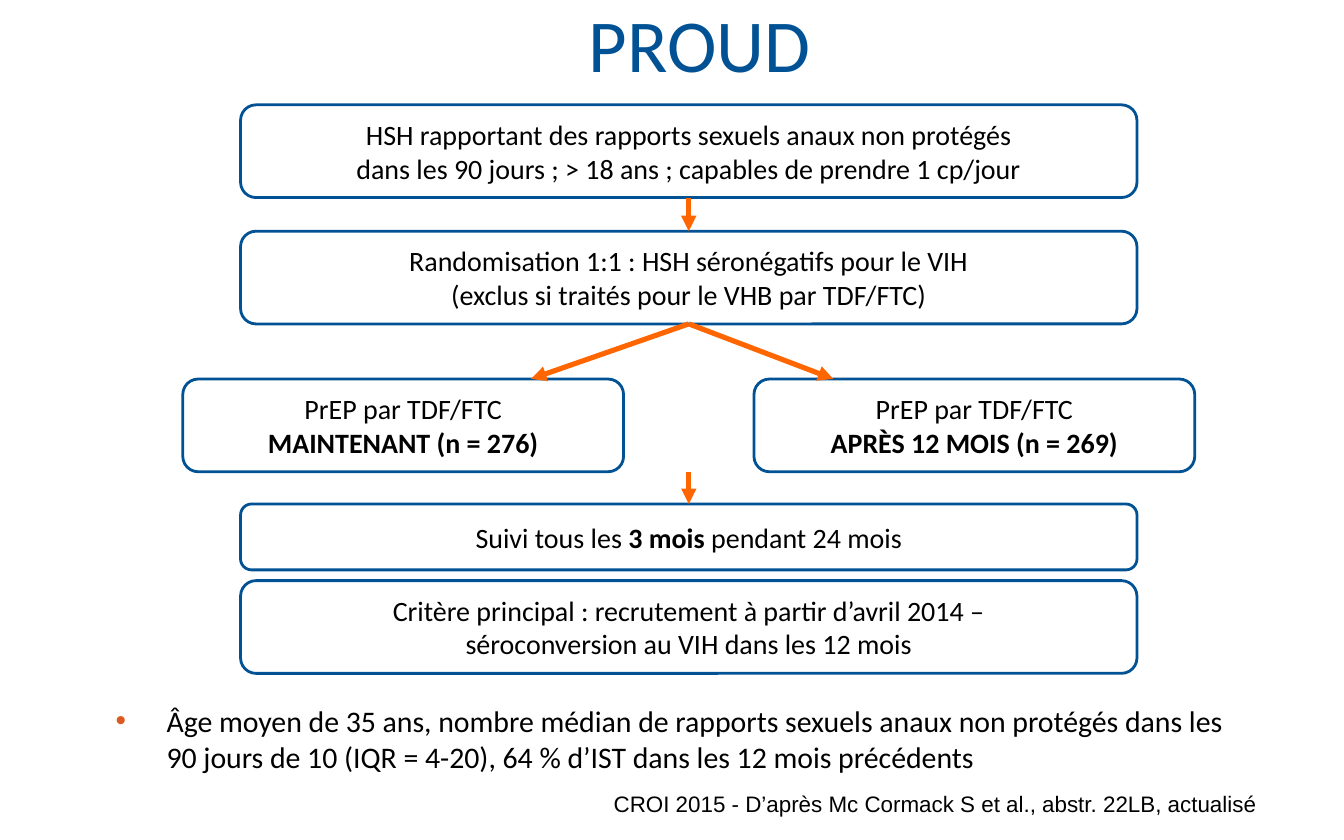
from dataclasses import dataclass

from lxml.etree import SubElement
from pptx import Presentation
from pptx.dml.color import RGBColor
from pptx.enum.shapes import MSO_CONNECTOR, MSO_SHAPE
from pptx.enum.text import MSO_ANCHOR, MSO_AUTO_SIZE, PP_ALIGN
from pptx.oxml.ns import qn
from pptx.util import Inches, Pt

WIDTH, HEIGHT = Inches(10), Inches(6.25)
BLUE, ORANGE, RUST = "005294", "FF6600", "DC5A20"
BLACK, WHITE = "000000", "FFFFFF"
TOP, BOTTOM = 0, 2


@dataclass
class Box:
    """A rectangle on a grid of 100 columns by 100 rows."""

    left: float
    top: float
    width: float
    height: float

    def inner(self, left, top, width, height):
        """Return a rectangle placed relative to this one."""
        return Box(self.left + left, self.top + top, width, height)

    def point(self, across, down):
        """Return a position given as shares of this rectangle."""
        return (
            column(self.left + across * self.width),
            row(self.top + down * self.height),
        )

    def frame(self):
        """Return left, top, width and height as lengths."""
        return column(self.left), row(self.top), column(self.width), row(self.height)


def column(count):
    """Return the length of a number of grid columns."""
    return round(WIDTH * count / 100)


def row(count):
    """Return the length of a number of grid rows."""
    return round(HEIGHT * count / 100)


def colour(value):
    """Turn a hex string into a colour."""
    return RGBColor.from_string(value)


def write(text_frame, *texts, size=15, font="Calibri", fill=BLACK,
          align=PP_ALIGN.CENTER, anchor=MSO_ANCHOR.MIDDLE, inset=None):
    """Write one paragraph per text, with ** around bold words."""
    text_frame.word_wrap = True
    text_frame.auto_size = MSO_AUTO_SIZE.NONE
    text_frame.vertical_anchor = anchor
    if inset is not None:
        text_frame.margin_left = text_frame.margin_right = inset
        text_frame.margin_top = text_frame.margin_bottom = inset
    for index, text in enumerate(texts):
        paragraph = text_frame.add_paragraph() if index else text_frame.paragraphs[0]
        paragraph.alignment = align
        for number, line in enumerate(text.split("\n")):
            if number:
                paragraph.add_line_break()
            for position, words in enumerate(line.split("**")):
                if words:
                    run = paragraph.add_run()
                    run.text = words
                    run.font.name = font
                    run.font.size = Pt(size)
                    run.font.bold = position % 2 == 1
                    run.font.color.rgb = colour(fill)
        for line_break in paragraph._p.findall(qn("a:br")):
            SubElement(line_break, qn("a:rPr")).set("sz", str(size * 100))


def add_step(slide, box, *texts):
    """Add one rounded step of the flowchart."""
    shape = slide.shapes.add_shape(MSO_SHAPE.ROUNDED_RECTANGLE, *box.frame())
    shape.shadow.inherit = False
    shape.fill.solid()
    shape.fill.fore_color.rgb = colour(WHITE)
    shape.line.color.rgb = colour(BLUE)
    shape.line.width = Pt(1.5)
    write(shape.text_frame, *texts)
    return shape


def add_arrow(slide, start, end, source=None, target=None):
    """Add an arrow, joined to the bottom of source and the top of target."""
    arrow = slide.shapes.add_connector(MSO_CONNECTOR.STRAIGHT, *start, *end)
    if source is not None:
        arrow.begin_connect(source, BOTTOM)
    if target is not None:
        arrow.end_connect(target, TOP)
    arrow.line.color.rgb = colour(ORANGE)
    arrow.line.width = Pt(2.75)
    properties = arrow._element.spPr
    SubElement(properties.find(qn("a:ln")), qn("a:tailEnd")).set("type", "triangle")
    SubElement(properties, qn("a:effectLst"))


def add_title(slide, box, text):
    """Place and format the title."""
    title = slide.shapes.title
    title.left, title.top, title.width, title.height = box.frame()
    write(title.text_frame, text, size=40, fill=BLUE, inset=0)
    title.text_frame.paragraphs[0].line_spacing = Pt(22)


def add_flowchart(slide, box):
    """Draw the trial design from inclusion to main criterion."""
    tall, short, wide, narrow = 11.04, 7.84, 66.7, 32.8
    indent = (box.width - wide) / 2
    inclusion_box = box.inner(indent, 0, wide, tall)
    random_box = box.inner(indent, 15.04, wide, tall)
    now_box = box.inner(0, 32.64, narrow, tall)
    later_box = box.inner(box.width - narrow, 32.64, narrow, tall)
    follow_box = box.inner(indent, 47.52, wide, short)
    criterion_box = box.inner(indent, 56.64, wide, tall)

    inclusion = add_step(
        slide, inclusion_box,
        "HSH rapportant des rapports sexuels anaux non protégés\n"
        "dans les 90 jours ; > 18 ans ; capables de prendre 1 cp/jour")
    randomisation = add_step(
        slide, random_box,
        "Randomisation 1:1 : HSH séronégatifs pour le VIH\n"
        "(exclus si traités pour le VHB par TDF/FTC)")
    add_step(slide, now_box, "PrEP par TDF/FTC", "**MAINTENANT (n = 276)**")
    add_step(slide, later_box, "PrEP par TDF/FTC", "**APRÈS 12 MOIS (n = 269)**")
    follow_up = add_step(slide, follow_box,
                         "Suivi tous les **3 mois **pendant 24 mois")
    add_step(
        slide, criterion_box,
        "Critère principal : recrutement à partir d’avril 2014 –\n"
        "séroconversion au VIH dans les 12 mois")

    add_arrow(slide, inclusion_box.point(0.5, 1), random_box.point(0.5, 0),
              inclusion, randomisation)
    for arm_box, share in ((now_box, 0.79), (later_box, 0.18)):
        add_arrow(slide, random_box.point(0.5, 1), arm_box.point(share, 0),
                  randomisation)
    arms_bottom = random_box.point(0.5, 0)[0], now_box.point(0, 1)[1]
    add_arrow(slide, arms_bottom, follow_box.point(0.5, 0), target=follow_up)


def add_bullet(slide, box, text):
    """Add the bulleted remark."""
    shape = slide.shapes.add_textbox(*box.frame())
    write(shape.text_frame, text, size=16, align=PP_ALIGN.LEFT,
          anchor=MSO_ANCHOR.TOP, inset=0)
    paragraph = shape.text_frame.paragraphs[0]
    paragraph.space_before = Pt(3.2)
    properties = paragraph._p.get_or_add_pPr()
    properties.set("marL", str(Inches(0.38)))
    properties.set("indent", str(-Inches(0.38)))
    bullet_colour = SubElement(properties, qn("a:buClr"))
    SubElement(bullet_colour, qn("a:srgbClr")).set("val", RUST)
    SubElement(properties, qn("a:buFont")).set("typeface", "Arial")
    SubElement(properties, qn("a:buChar")).set("char", "•")


def add_credit(slide, box, text):
    """Add the reference at the bottom right."""
    shape = slide.shapes.add_textbox(*box.frame())
    write(shape.text_frame, text, size=12, font="Arial",
          align=PP_ALIGN.RIGHT, anchor=MSO_ANCHOR.TOP)


def main():
    """Build and save the slide."""
    presentation = Presentation()
    presentation.slide_width, presentation.slide_height = WIDTH, HEIGHT
    slide = presentation.slides.add_slide(presentation.slide_layouts[5])
    add_title(slide, Box(11.6, 3.52, 80.9, 8.8), "PROUD")
    add_flowchart(slide, Box(13.6, 12.48, 75.3, 67.68))
    add_bullet(
        slide, Box(8.6, 83.68, 83.4, 9.6),
        "Âge moyen de 35 ans, nombre médian de rapports sexuels anaux non protégés "
        "dans les 90 jours de 10 (IQR = 4-20), 64 % d’IST dans les 12 mois précédents")
    add_credit(slide, Box(35.3, 93.28, 59.7, 6.88),
               "CROI 2015 - D’après Mc Cormack S et al., abstr. 22LB, actualisé ")
    presentation.save("out.pptx")


if __name__ == "__main__":
    main()
